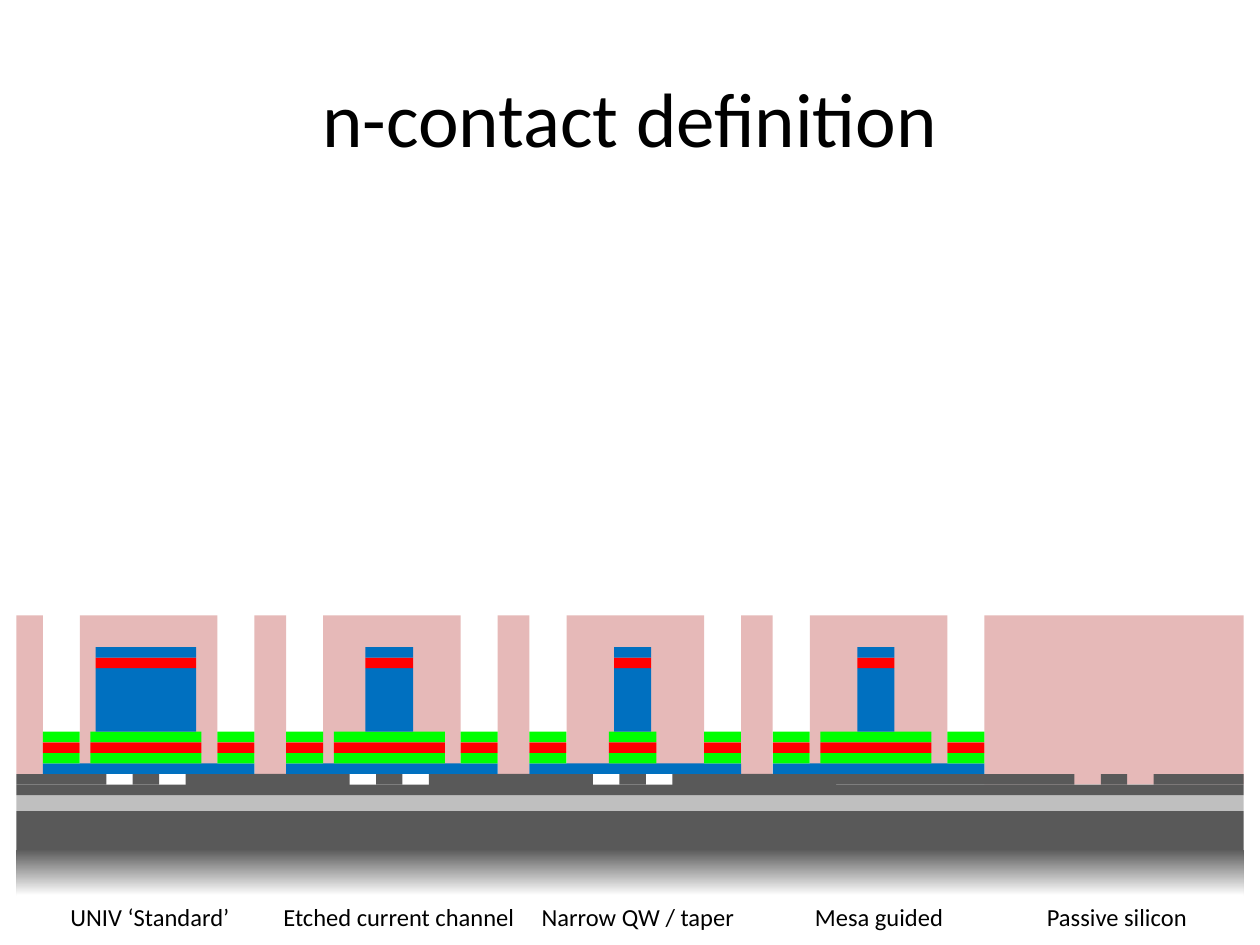
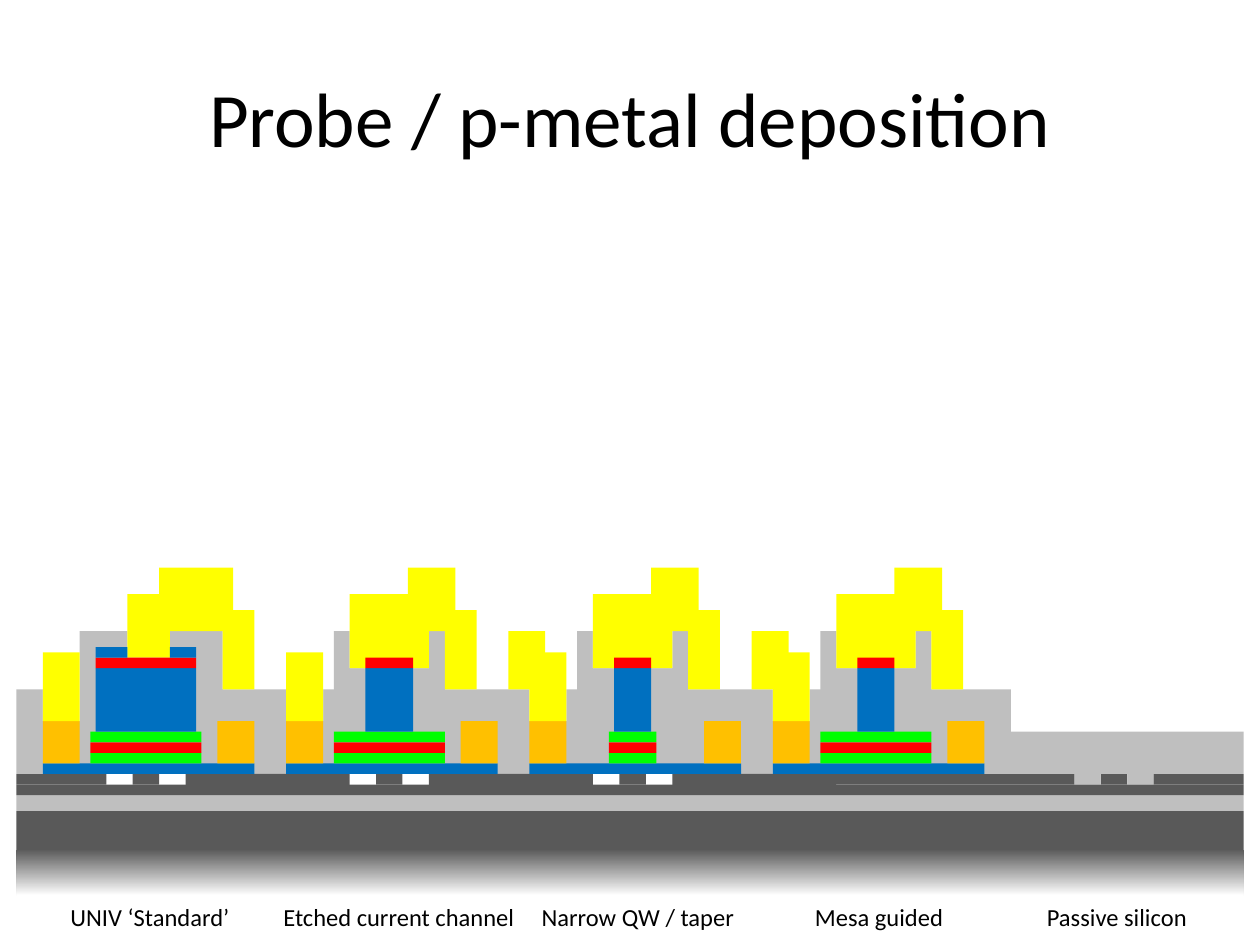
from pptx import Presentation
from pptx.dml.color import RGBColor
from pptx.enum.shapes import MSO_SHAPE
from pptx.enum.text import MSO_ANCHOR, PP_ALIGN
from pptx.util import Pt

RECT = MSO_SHAPE.RECTANGLE
MIDDLE = MSO_ANCHOR.MIDDLE
LEFT, CENTER = PP_ALIGN.LEFT, PP_ALIGN.CENTER

BLACK = RGBColor(0x00, 0x00, 0x00)
WHITE = RGBColor(0xFF, 0xFF, 0xFF)
RESIST = RGBColor(0xE6, 0xB9, 0xB8)
OXIDE = RGBColor(0xBF, 0xBF, 0xBF)
SILICON = RGBColor(0x59, 0x59, 0x59)
BLUE = RGBColor(0x00, 0x70, 0xC0)
GREEN = RGBColor(0x00, 0xFF, 0x00)
RED = RGBColor(0xFF, 0x00, 0x00)
ORANGE = RGBColor(0xFF, 0xC0, 0x00)
YELLOW = RGBColor(0xFF, 0xFF, 0x00)

FONT = "Calibri"
EDGE = 9.36
SURFACE = 442.3
COLUMNS = 232
UNIT = 701.28 / COLUMNS

STARTS = [5, 51, 97, 143]
WELLS = [(9, 21), (9, 21), (15, 9), (9, 21)]
MESAS = [(10, 19), (15, 9), (16, 7), (16, 7)]
PADS = [(0, 7), (33, 7)]
WINDOWS = [(16, 8, 22)] + [(12, 15, 20)] * 3
BRIDGES = [(34, 22, 14)] + [(30, 23, 9)] * 3
TRENCHES = [200, 210]
LABELS = [
    ("UNIV ‘Standard’", 33.1, 107.3),
    ("Etched current channel", 154.8, 147.6),
    ("Narrow QW / taper", 302.4, 125.3),
    ("Mesa guided", 458.6, 88.6),
    ("Passive silicon", 591.1, 95),
]


def put_text(shape, text, size=14, align=LEFT, wrap=False, anchor=None):
    frame = shape.text_frame
    frame.word_wrap = wrap
    if anchor is not None:
        frame.vertical_anchor = anchor
    para = frame.paragraphs[0]
    para.alignment = align
    run = para.add_run()
    run.text = text
    run.font.name = FONT
    run.font.size = Pt(size)
    run.font.color.rgb = BLACK


def add_block(slide, color, col, width, low, high):
    block = slide.shapes.add_shape(
        RECT, Pt(EDGE + col * UNIT), Pt(SURFACE - high * UNIT),
        Pt(width * UNIT), Pt((high - low) * UNIT))
    block.shadow.inherit = False
    block.line.fill.background()
    block.fill.solid()
    block.fill.fore_color.rgb = color
    return block


def add_title(slide, text):
    title = slide.shapes.title
    title.left, title.top, title.width, title.height = (
        Pt(36), Pt(21.6), Pt(648), Pt(90))
    put_text(title, text, size=44, align=CENTER, wrap=True, anchor=MIDDLE)


def add_labels(slide):
    for text, left, width in LABELS:
        box = slide.shapes.add_textbox(Pt(left), Pt(511.9), Pt(width), Pt(24.2))
        put_text(box, text)


def add_wafer(slide):
    base = add_block(slide, SILICON, 0, COLUMNS, -23, -7)
    base.fill.gradient()
    base.fill.gradient_angle = 270
    for stop, place, color in zip(base.fill.gradient_stops, (0.45, 1), (SILICON, WHITE)):
        stop.position = place
        stop.color.rgb = color
    add_block(slide, OXIDE, 0, COLUMNS, -7, -4)
    add_block(slide, SILICON, 0, COLUMNS, -4, -2)
    for col, width in [(0, 17), (154, 46), (205, 5), (215, 17)]:
        add_block(slide, SILICON, col, width, -2, 0)
    for start in STARTS[:3]:
        add_block(slide, SILICON, start + 17, 5, -2, 0)
        add_block(slide, SILICON, start + 27, 31, -3, 0)
    for start in STARTS:
        add_block(slide, BLUE, start, 40, 0, 2)


def add_stack(slide, col, width):
    for row, color in enumerate([GREEN, RED, GREEN]):
        add_block(slide, color, col, width, 2 + 2 * row, 4 + 2 * row)


def add_mesas(slide):
    for start, well, (col, width) in zip(STARTS, WELLS, MESAS):
        add_stack(slide, start + well[0], well[1])
        add_block(slide, BLUE, start + col, width, 8, 20)
        add_block(slide, RED, start + col, width, 20, 22)


def add_resist(slide):
    add_block(slide, RESIST, 0, 5, 0, 30)
    for start in STARTS:
        add_block(slide, RESIST, start + 7, 26, 0, 30)
    for start in STARTS[:3]:
        add_block(slide, RESIST, start + 40, 6, 0, 30)
    add_block(slide, RESIST, 183, 49, -2, 30)


def add_cover(slide):
    for start in STARTS[1:]:
        add_block(slide, OXIDE, start + 9, 21, 0, 27)
    add_block(slide, OXIDE, 188, 44, 0, 8)
    add_block(slide, OXIDE, 0, 188, 0, 16)
    add_block(slide, OXIDE, 10, 29, 0, 27)
    for col in TRENCHES:
        add_block(slide, OXIDE, col, 5, -2, 0)


def fill_vias(slide, color, pad_top, mesa_top):
    for start, (col, width, low) in zip(STARTS, WINDOWS):
        add_block(slide, color, start, 7, 10, pad_top)
        add_block(slide, color, start + col, width, low, mesa_top)


def add_probes(slide):
    for start, (leg, arm, width) in zip(STARTS, BRIDGES):
        add_block(slide, YELLOW, start + leg, 6, 16, 31)
        add_block(slide, YELLOW, start + arm, width, 27, 39)
    for start in STARTS[1:3]:
        add_block(slide, YELLOW, start + 42, 7, 16, 27)


def start_slide(deck, title):
    slide = deck.slides.add_slide(deck.slide_layouts[5])
    add_title(slide, title)
    return slide


def draw_contact(deck):
    slide = start_slide(deck, "n-contact definition")
    add_resist(slide)
    add_wafer(slide)
    add_labels(slide)
    add_mesas(slide)
    for start, (col, width) in zip(STARTS, MESAS):
        for pad, wide in PADS:
            add_stack(slide, start + pad, wide)
        add_block(slide, BLUE, start + col, width, 22, 24)


def draw_metal(deck):
    slide = start_slide(deck, "Probe / p-metal deposition")
    add_cover(slide)
    fill_vias(slide, WHITE, 36, 36)
    add_wafer(slide)
    add_labels(slide)
    for start in STARTS:
        for pad, wide in PADS:
            add_block(slide, ORANGE, start + pad, wide, 2, 10)
    fill_vias(slide, YELLOW, 23, 34)
    add_mesas(slide)
    add_probes(slide)
    for col, width in [(15, 6), (29, 5)]:
        add_block(slide, BLUE, col, width, 22, 24)


def main():
    deck = Presentation()
    deck.slide_width, deck.slide_height = Pt(720), Pt(540)
    draw_contact(deck)
    draw_metal(deck)
    deck.save("out.pptx")


if __name__ == "__main__":
    main()
